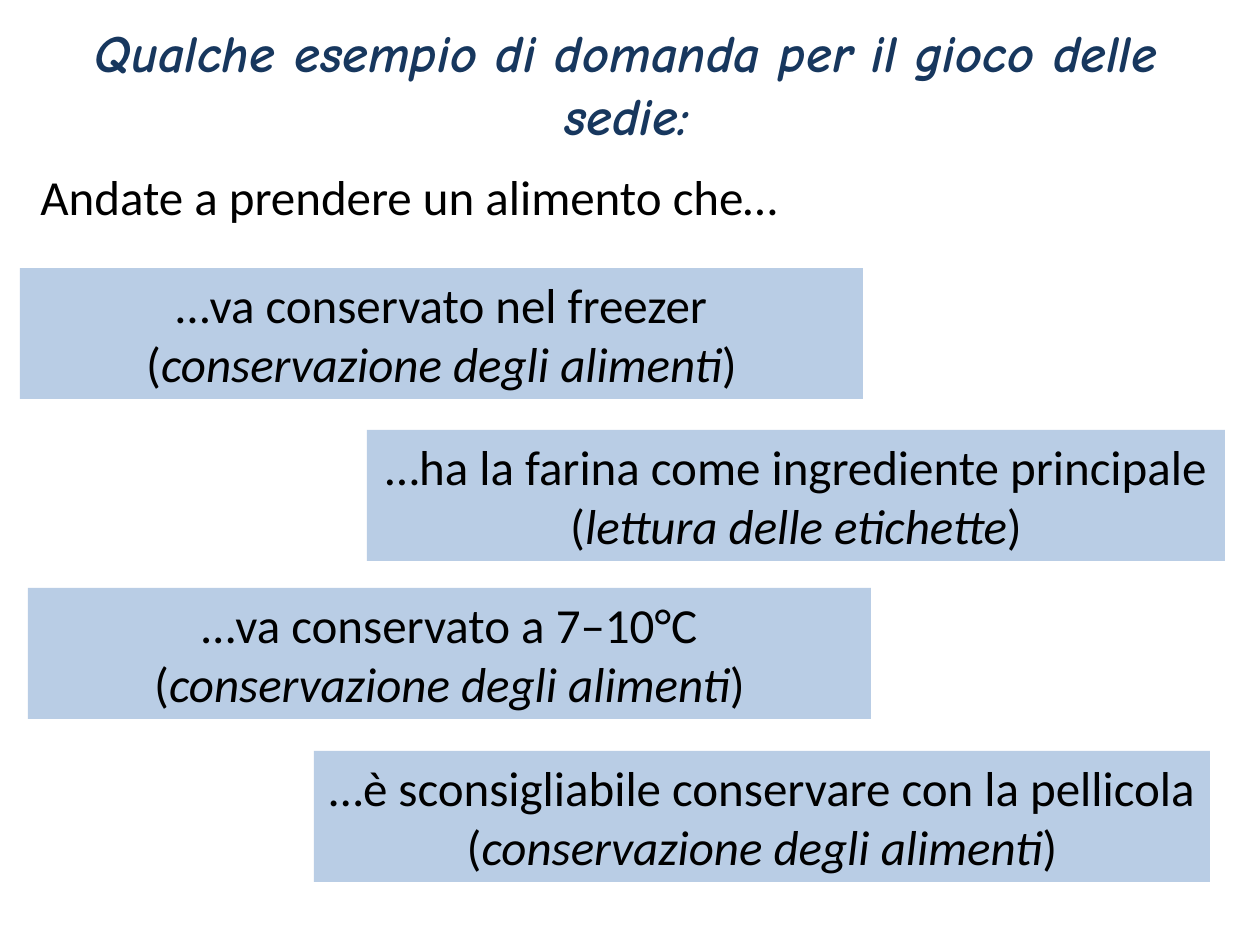
from dataclasses import dataclass

from pptx import Presentation
from pptx.dml.color import RGBColor
from pptx.enum.shapes import MSO_SHAPE
from pptx.enum.text import MSO_ANCHOR, PP_ALIGN
from pptx.util import Emu, Pt

RECTANGLE = MSO_SHAPE.RECTANGLE
TOP, MIDDLE = MSO_ANCHOR.TOP, MSO_ANCHOR.MIDDLE
LEFT, CENTER = PP_ALIGN.LEFT, PP_ALIGN.CENTER
EMU_PER_PX = 914400 / 126
CARD_HEIGHT = 131


@dataclass(frozen=True)
class Theme:
    """Colours, fonts and type sizes of the slide."""
    title_color: RGBColor = RGBColor(0x17, 0x37, 0x5E)
    text_color: RGBColor = RGBColor(0x00, 0x00, 0x00)
    card_color: RGBColor = RGBColor(0xB9, 0xCD, 0xE5)
    title_font: str = "Comic Neue"
    text_font: str = "Calibri"
    title_size: Pt = Pt(30)
    text_size: Pt = Pt(28)


THEME = Theme()
TITLE_FORMAT = {"name": THEME.title_font, "size": THEME.title_size, "bold": True, "italic": True}
TEXT_FORMAT = {"name": THEME.text_font, "size": THEME.text_size}

STORAGE = "conservazione degli alimenti"
CARDS = [
    (20, 268, 843, "…va conservato nel freezer", STORAGE),
    (367, 430, 858, "…ha la farina come ingrediente principale", "lettura delle etichette"),
    (28, 588, 843, "…va conservato a 7–10°C", STORAGE),
    (314, 751, 896, "…è sconsigliabile conservare con la pellicola", STORAGE),
]


def scale(*lengths):
    """Turn pixel lengths into EMU."""
    return [Emu(round(length * EMU_PER_PX)) for length in lengths]


def add_run(paragraph, text, color, font_format):
    """Append a formatted run to a paragraph."""
    run = paragraph.add_run()
    run.text = text
    run.font.color.rgb = color
    for name, value in font_format.items():
        setattr(run.font, name, value)


def add_text(slide, box, text, color, font_format, alignment, anchor):
    """Add a wrapping text box with one paragraph."""
    frame = slide.shapes.add_textbox(*scale(*box)).text_frame
    frame.word_wrap = True
    frame.vertical_anchor = anchor
    paragraph = frame.paragraphs[0]
    paragraph.alignment = alignment
    add_run(paragraph, text, color, font_format)


def add_card(slide, left, top, width, question, topic):
    """Add a filled card with a question and its topic in brackets."""
    shape = slide.shapes.add_shape(RECTANGLE, *scale(left, top, width, CARD_HEIGHT))
    shape.shadow.inherit = False
    shape.fill.solid()
    shape.fill.fore_color.rgb = THEME.card_color
    shape.line.fill.background()
    frame = shape.text_frame
    frame.word_wrap = True
    frame.vertical_anchor = TOP
    lines = [[(question, False)], [("(", False), (topic, True), (")", False)]]
    for paragraph, runs in zip((frame.paragraphs[0], frame.add_paragraph()), lines):
        paragraph.alignment = CENTER
        for text, italic in runs:
            add_run(paragraph, text, THEME.text_color, {**TEXT_FORMAT, "italic": italic})


def main():
    """Build and save the slide."""
    presentation = Presentation()
    presentation.slide_width, presentation.slide_height = scale(1260, 945)
    slide = presentation.slides.add_slide(presentation.slide_layouts[6])
    add_text(slide, (28, 6, 1197, 154), "Qualche esempio di domanda per il gioco delle sedie:",
             THEME.title_color, TITLE_FORMAT, CENTER, MIDDLE)
    add_text(slide, (28, 160, 837, 72), "Andate a prendere un alimento che…",
             THEME.text_color, TEXT_FORMAT, LEFT, TOP)
    for card in CARDS:
        add_card(slide, *card)
    presentation.save("out.pptx")


if __name__ == "__main__":
    main()
